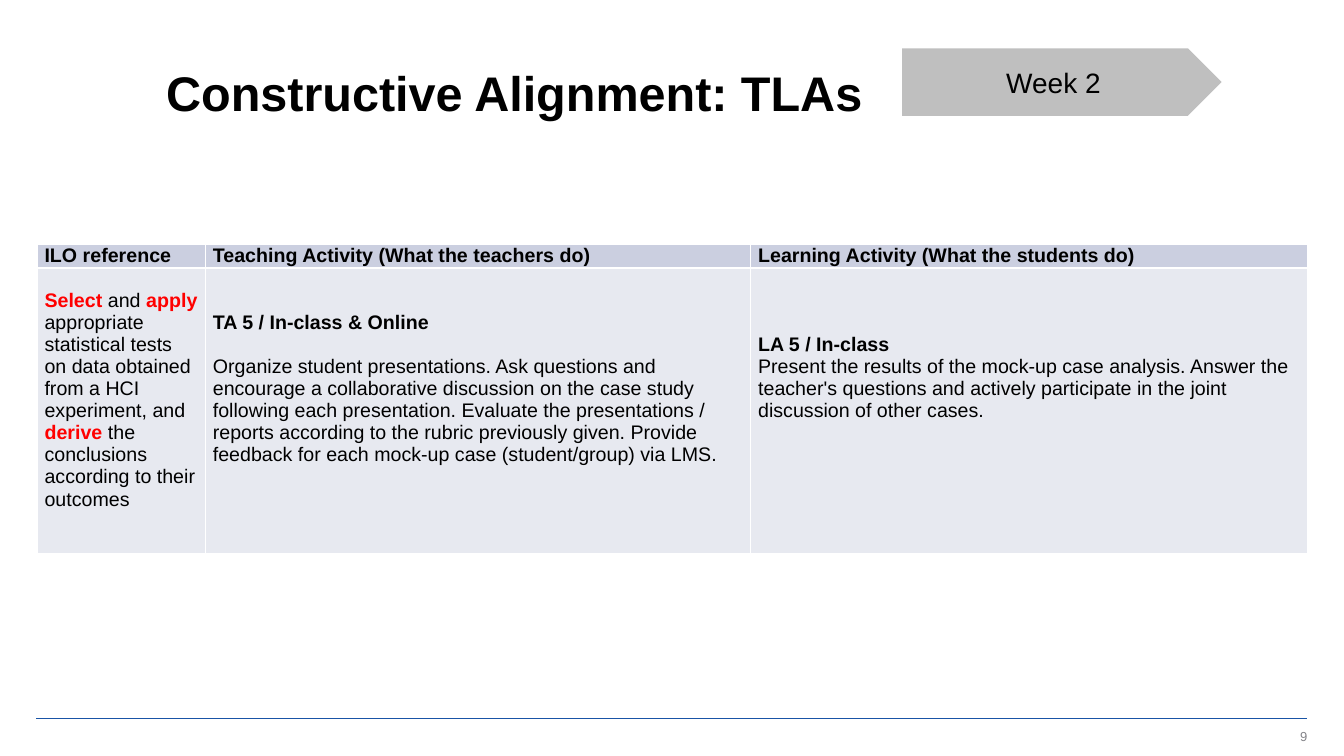
from lxml import etree
from pptx import Presentation
from pptx.dml.color import RGBColor
from pptx.enum.shapes import MSO_CONNECTOR, MSO_SHAPE
from pptx.enum.text import MSO_ANCHOR, PP_ALIGN
from pptx.oxml.ns import qn
from pptx.util import Pt

LEFT, CENTER, RIGHT = PP_ALIGN.LEFT, PP_ALIGN.CENTER, PP_ALIGN.RIGHT
MIDDLE, TOP = MSO_ANCHOR.MIDDLE, MSO_ANCHOR.TOP
STRAIGHT, PENTAGON = MSO_CONNECTOR.STRAIGHT, MSO_SHAPE.PENTAGON

FONT = "Arial"
BLACK, RED, WHITE = "000000", "FF0000", "FFFFFF"
TABLE_SIZE = 14
TEXT_LINE = 15.7
COLUMN_WIDTHS = [120.24, 389.5, 397.4]
ROW_HEIGHTS = [TEXT_LINE, 13 * TEXT_LINE]
HEADINGS = [
    "ILO reference",
    "Teaching Activity (What the teachers do)",
    "Learning Activity (What the students do)",
]
OUTCOME = [
    ("Select ", True),
    ("and ", False),
    ("apply ", True),
    ("appropriate statistical tests on data obtained from a HCI experiment, and ", False),
    ("derive ", True),
    ("the conclusions according to their outcomes", False),
]
TEACHING = (
    "TA 5 / In-class & Online",
    "Organize student presentations. Ask questions and encourage a collaborative "
    "discussion on the case study following each presentation. Evaluate the "
    "presentations / reports according to the rubric previously given. Provide "
    "feedback for each mock-up case (student/group) via LMS.",
)
LEARNING = (
    "LA 5 / In-class",
    "Present the results of the mock-up case analysis. Answer the teacher's questions "
    "and actively participate in the joint discussion of other cases.",
)


def color(hex_code):
    """Turn a hex string into a colour."""
    return RGBColor.from_string(hex_code)


def style(font, size, hex_code=BLACK, bold=False):
    """Set the face, size, colour and weight of a font."""
    font.name, font.size, font.bold = FONT, Pt(size), bold
    font.color.rgb = color(hex_code)


def write(shape, text, size, hex_code=BLACK, bold=False, align=LEFT, insets=(7.2, 3.6)):
    """Put one vertically centred line of text in a shape."""
    frame = shape.text_frame
    frame.word_wrap = True
    frame.vertical_anchor = MIDDLE
    frame.margin_left = frame.margin_right = Pt(insets[0])
    frame.margin_top = frame.margin_bottom = Pt(insets[1])
    frame.text = text
    para = frame.paragraphs[0]
    para.alignment = align
    style(para.runs[0].font, size, hex_code, bold)
    return para


def add_header(page, left, top, width, height):
    """Place the title and the week tag at the right of it."""
    title = page.shapes.add_textbox(Pt(left), Pt(top), Pt(width), Pt(height))
    write(title, "Constructive Alignment: TLAs", 34.7, bold=True).line_spacing = 1.18
    week = page.shapes.add_shape(
        PENTAGON, Pt(left + 532.8), Pt(top + 7.9), Pt(228.24), Pt(48.24))
    week.shadow.inherit = False
    week.fill.solid()
    week.fill.fore_color.rgb = color("BFBFBF")
    week.line.fill.background()
    write(week, "Week 2", 20, align=CENTER)


def prepare_cell(cell, fill, blank_lines=0):
    """Give a cell its margins, white borders and fill."""
    cell.margin_left = cell.margin_right = Pt(5.2)
    cell.margin_top, cell.margin_bottom = Pt(blank_lines * TEXT_LINE), Pt(0)
    cell.vertical_anchor = TOP
    properties = cell._tc.get_or_add_tcPr()
    for side in ("a:lnL", "a:lnR", "a:lnT", "a:lnB"):
        border = etree.SubElement(properties, qn(side), w=str(Pt(1)))
        solid = etree.SubElement(border, qn("a:solidFill"))
        etree.SubElement(solid, qn("a:srgbClr"), val=WHITE)
    cell.fill.solid()
    cell.fill.fore_color.rgb = color(fill)


def fill_activity(cell, activity, gap):
    """Write a bold activity label and its description."""
    label, description = activity
    frame = cell.text_frame
    frame.text = label
    style(frame.paragraphs[0].runs[0].font, TABLE_SIZE, bold=True)
    para = frame.add_paragraph()
    para.text = description
    para.space_before = Pt(gap)
    style(para.runs[0].font, TABLE_SIZE)


def add_alignment_table(page, left, top):
    """Place the table of outcome, teaching and learning activities."""
    frame = page.shapes.add_table(
        len(ROW_HEIGHTS), len(COLUMN_WIDTHS), Pt(left), Pt(top),
        Pt(sum(COLUMN_WIDTHS)), Pt(sum(ROW_HEIGHTS)))
    table = frame.table
    for row, height in zip(table.rows, ROW_HEIGHTS):
        row.height = Pt(height)
    for index, (width, heading) in enumerate(zip(COLUMN_WIDTHS, HEADINGS)):
        table.columns[index].width = Pt(width)
        cell = table.cell(0, index)
        prepare_cell(cell, "CBCFE0")
        cell.text_frame.text = heading
        style(cell.text_frame.paragraphs[0].runs[0].font, TABLE_SIZE, bold=True)
        prepare_cell(table.cell(1, index), "E7E9F0", blank_lines=index + 1)
    para = table.cell(1, 0).text_frame.paragraphs[0]
    for text, is_verb in OUTCOME:
        span = para.add_run()
        span.text = text
        style(span.font, TABLE_SIZE, RED if is_verb else BLACK, is_verb)
    fill_activity(table.cell(1, 1), TEACHING, TEXT_LINE)
    fill_activity(table.cell(1, 2), LEARNING, 0)


def add_footer(page, left, top, width):
    """Place the rule and the page number under it."""
    rule = page.shapes.add_connector(
        STRAIGHT, Pt(left), Pt(top), Pt(left + width), Pt(top))
    rule.line.color.rgb = color("1954A6")
    rule.line.width = Pt(1)
    etree.SubElement(rule._element.spPr, qn("a:effectLst"))
    number = page.shapes.add_textbox(
        Pt(left + width - 216), Pt(top + 6.5), Pt(216), Pt(12.24))
    write(number, "9", 9.3, "848489", align=RIGHT, insets=(0, 0))


def main():
    """Build the slide and save it."""
    deck = Presentation()
    deck.slide_width, deck.slide_height = Pt(960), Pt(540)
    page = deck.slides.add_slide(deck.slide_layouts[6])
    add_footer(page, 25.92, 513.36, 907.92)
    add_header(page, 111.6, 26.64, 792.72, 70.56)
    add_alignment_table(page, 26.64, 174.6)
    deck.save("out.pptx")


if __name__ == "__main__":
    main()
